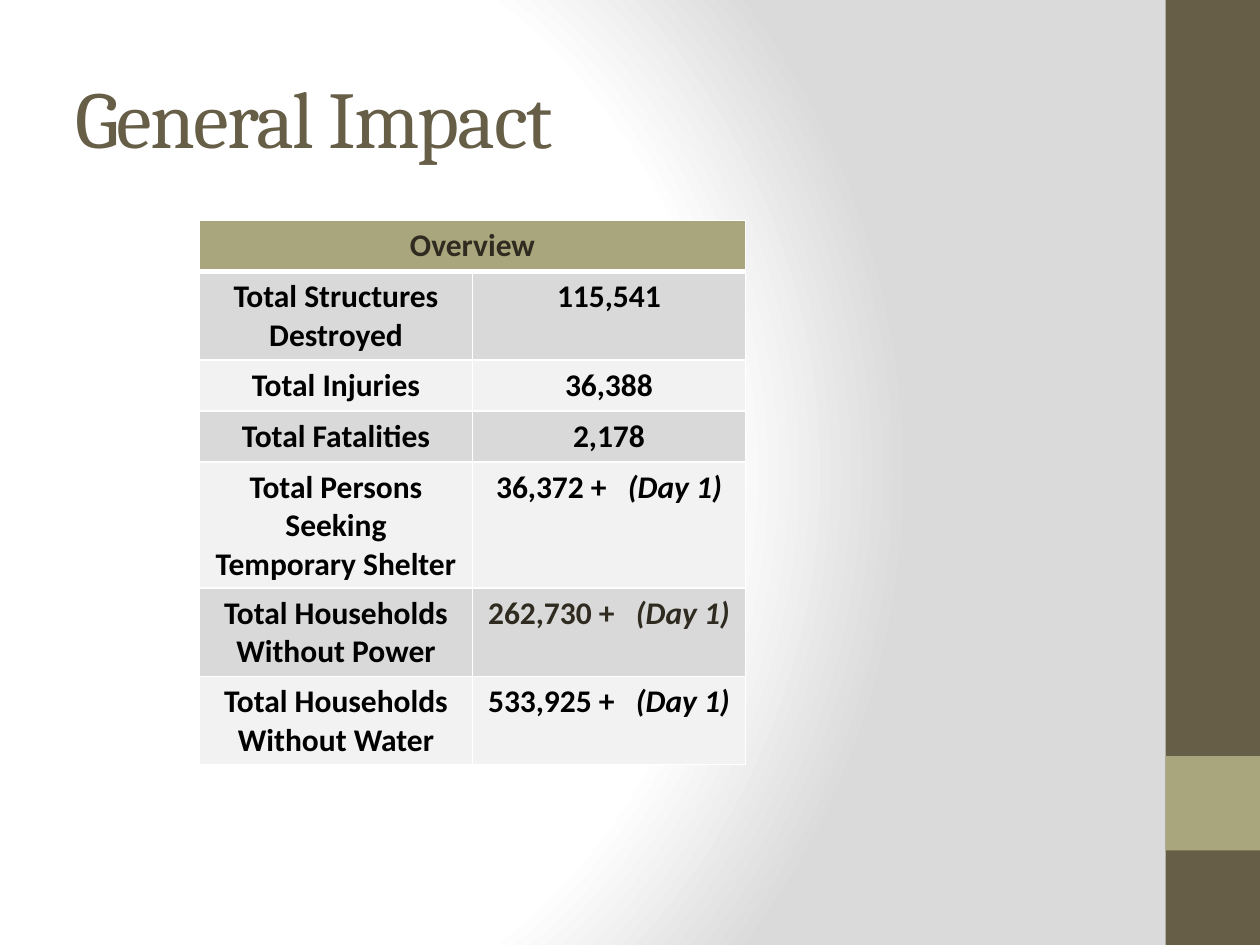
from dataclasses import dataclass

from pptx import Presentation
from pptx.dml.color import RGBColor
from pptx.enum.shapes import MSO_SHAPE
from pptx.enum.text import MSO_ANCHOR, PP_ALIGN
from pptx.oxml import parse_xml
from pptx.oxml.ns import nsdecls, qn
from pptx.util import Pt


@dataclass(frozen=True)
class Theme:
    brown: str = "675E47"
    olive: str = "A9A57C"
    dark: str = "2F2B20"
    black: str = "000000"
    white: str = "FFFFFF"
    edge: str = "DADADA"
    bands: tuple = ("D9D9D9", "F2F2F2")
    head: str = "Cambria"
    body: str = "Calibri"
    big: int = 46
    small: int = 18


def color(code):
    return RGBColor.from_string(code)


class Deck:
    def __init__(self, theme):
        self.theme = theme
        self.file = Presentation()
        self.file.slide_width, self.file.slide_height = Pt(720), Pt(540)
        self.slide = self.file.slides.add_slide(self.file.slide_layouts[6])

    def backdrop(self):
        """Fill the background with a circular gradient, white at its heart."""
        self.slide.background.fill.gradient()
        old = self.slide.element.find(".//" + qn("a:gradFill"))
        stops = ((0, self.theme.white), (75, self.theme.white), (100, self.theme.edge))
        marks = "".join(
            f'<a:gs pos="{pos * 1000}"><a:srgbClr val="{code}"/></a:gs>'
            for pos, code in stops
        )
        new = parse_xml(
            f'<a:gradFill {nsdecls("a")} rotWithShape="1"><a:gsLst>{marks}</a:gsLst>'
            '<a:path path="circle"><a:fillToRect l="20000" t="50000" '
            'r="100000" b="50000"/></a:path></a:gradFill>'
        )
        old.getparent().replace(old, new)

    def block(self, left, top, width, height, fill):
        shape = self.slide.shapes.add_shape(
            MSO_SHAPE.RECTANGLE, Pt(left), Pt(top), Pt(width), Pt(height))
        shape.shadow.inherit = False
        shape.fill.solid()
        shape.fill.fore_color.rgb = color(fill)
        shape.line.fill.background()

    def label(self, para, text, code, track=0, **style):
        """Add a run; track is extra letter spacing in points."""
        run = para.add_run()
        run.text = text
        for name, value in style.items():
            setattr(run.font, name, value)
        run.font.color.rgb = color(code)
        if track:
            run._r.get_or_add_rPr().set("spc", str(track * 100))

    def title(self, text, left, top, width, height):
        box = self.slide.shapes.add_textbox(Pt(left), Pt(top), Pt(width), Pt(height))
        frame = box.text_frame
        frame.word_wrap = True
        frame.vertical_anchor = MSO_ANCHOR.MIDDLE
        self.label(frame.paragraphs[0], text, self.theme.brown, track=-1,
                   name=self.theme.head, size=Pt(self.theme.big))

    def border(self, cell, base=1):
        props = cell._tc.get_or_add_tcPr()
        widths = {"lnL": 1, "lnR": 1, "lnT": 1, "lnB": base}
        for spot, (tag, width) in enumerate(widths.items()):
            props.insert(spot, parse_xml(
                f'<a:{tag} {nsdecls("a")} w="{Pt(width)}"><a:solidFill>'
                f'<a:srgbClr val="{self.theme.white}"/></a:solidFill></a:{tag}>'))

    def cell(self, cell, text, fill, code, note="", base=1):
        cell.fill.solid()
        cell.fill.fore_color.rgb = color(fill)
        self.border(cell, base)
        para = cell.text_frame.paragraphs[0]
        para.alignment = PP_ALIGN.CENTER
        style = {"name": self.theme.body, "size": Pt(self.theme.small), "bold": True}
        self.label(para, text, code, **style)
        if note:
            self.label(para, " ", code, track=8, **style)
            self.label(para, note, code, italic=True, **style)

    def table(self, head, rows, left, top, width, step):
        count = len(rows) + 1
        grid = self.slide.shapes.add_table(
            count, 2, Pt(left), Pt(top), Pt(2 * width), Pt(count * step)).table
        grid.first_row = grid.horz_banding = False
        for col in grid.columns:
            col.width = Pt(width)
        for row in grid.rows:
            row.height = Pt(step)
        theme = self.theme
        grid.cell(0, 0).merge(grid.cell(0, 1))
        self.cell(grid.cell(0, 0), head, theme.olive, theme.dark, base=3)
        self.border(grid.cell(0, 1), base=3)
        for num, (name, value, note, code) in enumerate(rows, 1):
            band = theme.bands[(num - 1) % 2]
            self.cell(grid.cell(num, 0), name, band, theme.black)
            self.cell(grid.cell(num, 1), value, band, code, note)


def main():
    theme = Theme()
    deck = Deck(theme)
    deck.backdrop()
    deck.block(666, 0, 54, 540, theme.brown)
    deck.block(666, 432, 54, 54, theme.olive)
    deck.title("General Impact", 36, 21.6, 600, 90)
    day = "(Day 1)"
    rows = [
        ("Total Structures Destroyed", "115,541", "", theme.black),
        ("Total Injuries", "36,388", "", theme.black),
        ("Total Fatalities", "2,178", "", theme.black),
        ("Total Persons Seeking Temporary Shelter", "36,372 +", day, theme.black),
        ("Total Households Without Power", "262,730 +", day, theme.dark),
        ("Total Households Without Water", "533,925 +", day, theme.black),
    ]
    deck.table("Overview", rows, left=114, top=126, width=156, step=29.2)
    deck.file.save("out.pptx")


if __name__ == "__main__":
    main()
